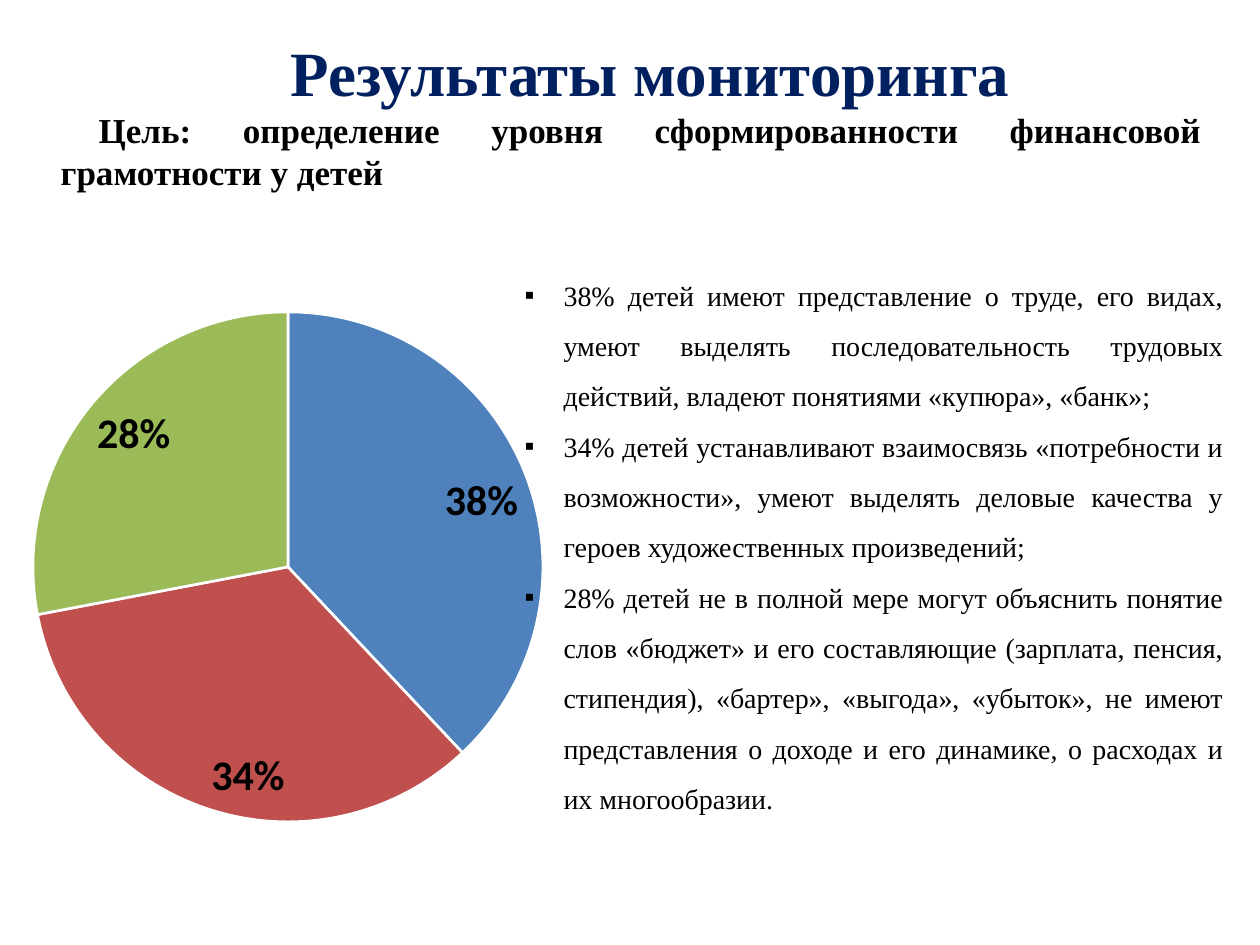
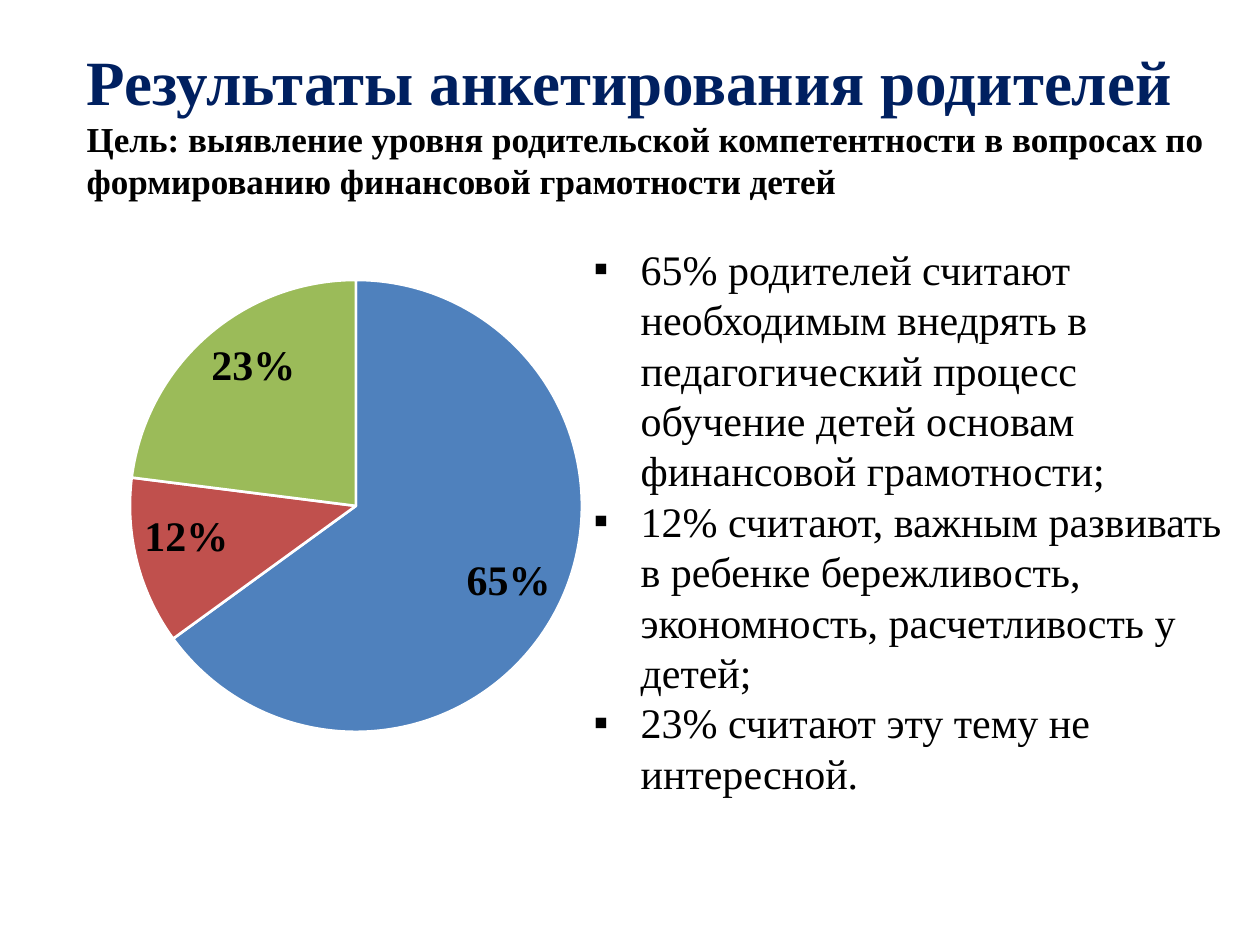
"""Build two survey slides, each with a heading, a pie chart and a list of findings."""
from lxml import etree
from pptx import Presentation, util as u
from pptx.chart.data import CategoryChartData
from pptx.dml.color import RGBColor
from pptx.enum import chart as ch, text
from pptx.oxml.ns import qn

SERIF = "Times New Roman"
COLORS = {"navy": "002060", "black": "000000", "white": "FFFFFF"}
SLICES = {"blue": "4F81BD", "red": "C0504D", "green": "9BBB59"}
ALIGN, ANCHOR = text.PP_ALIGN, text.MSO_ANCHOR

SLIDES = [
    {
        "title": "Результаты мониторинга",
        "goal": "Цель: определение уровня сформированности финансовой грамотности у детей",
        "head": {"box": (48, 26, 1166, 174), "anchor": ANCHOR.MIDDLE, "indent": 38,
                 "aligns": (ALIGN.CENTER, ALIGN.JUSTIFY)},
        "shares": (0.38, 0.34, 0.28),
        "pie": {"box": (15, 226, 546, 683), "disc": (288, 567, 255), "font": "Calibri"},
        "items": [
            "38% детей имеют представление о труде, его видах, умеют выделять последовательность "
            "трудовых действий, владеют понятиями «купюра», «банк»;",
            "34% детей устанавливают взаимосвязь «потребности и возможности», умеют выделять "
            "деловые качества у героев художественных произведений;",
            "28% детей не в полной мере могут объяснить понятие слов «бюджет» и его составляющие "
            "(зарплата, пенсия, стипендия), «бартер», «выгода», «убыток», не имеют представления "
            "о доходе и его динамике, о расходах и их многообразии.",
        ],
        "list": {"box": (512, 255, 724, 572), "size": 16, "hang": 39,
                 "lead": 1.5, "align": ALIGN.JUSTIFY},
    },
    {
        "title": "Результаты анкетирования родителей",
        "goal": "Цель: выявление уровня родительской компетентности в вопросах по "
                "формированию финансовой грамотности детей",
        "head": {"box": (74, 36, 1160, 174), "anchor": ANCHOR.TOP, "indent": 0,
                 "aligns": (ALIGN.LEFT, ALIGN.LEFT)},
        "shares": (0.65, 0.12, 0.23),
        "pie": {"box": (25, 193, 576, 627), "disc": (356, 506, 226), "font": SERIF},
        "items": [
            "65% родителей считают необходимым внедрять в педагогический процесс обучение "
            "детей основам финансовой грамотности;",
            "12% считают, важным развивать в ребенке бережливость, экономность, "
            "расчетливость у детей;",
            "23% считают эту тему не интересной.",
        ],
        "list": {"box": (581, 237, 655, 572), "size": 24, "hang": 47,
                 "lead": 1, "align": ALIGN.LEFT},
    },
]


def px(n):
    return u.Emu(round(n * 914400 / 126))


def style(font, size, color, bold=False, name=SERIF):
    font.name, font.size, font.bold = name, u.Pt(size), bold
    font.color.rgb = RGBColor.from_string(COLORS[color])


def place(shape, box, anchor):
    shape.left, shape.top, shape.width, shape.height = map(px, box)
    frame = shape.text_frame
    frame.word_wrap, frame.auto_size = True, text.MSO_AUTO_SIZE.NONE
    frame.vertical_anchor = anchor
    return frame


def write(frame, lines):
    frame.text = "\n".join(lines)
    for para in frame.paragraphs:
        para.space_before = u.Pt(0)
    return frame.paragraphs


def indent(para, left, first):
    props = para._p.get_or_add_pPr()
    props.set("marL", str(px(left)))
    props.set("indent", str(px(first)))
    return props


def add_head(slide, data):
    head = data["head"]
    frame = place(slide.shapes.title, head["box"], head["anchor"])
    paras = write(frame, (data["title"], data["goal"]))
    looks = ((36, "navy"), (20, "black"))
    for para, align, look in zip(paras, head["aligns"], looks):
        para.alignment = align
        indent(para, 0, head["indent"])
        style(para.font, *look, bold=True)


def set_plot(plot, box, disc):
    left, top, width, height = box
    mid_x, mid_y, radius = disc
    area = plot._element.getparent()
    for old in area.findall(qn("c:layout")):
        area.remove(old)
    layout = etree.Element(qn("c:layout"))
    area.insert(0, layout)
    manual = etree.SubElement(layout, qn("c:manualLayout"))
    values = {
        "layoutTarget": "inner", "xMode": "edge", "yMode": "edge",
        "x": (mid_x - radius - left) / width, "y": (mid_y - radius - top) / height,
        "w": 2 * radius / width, "h": 2 * radius / height,
    }
    for tag, value in values.items():
        etree.SubElement(manual, qn(f"c:{tag}")).set("val", str(value))


def add_pie(slide, data):
    pie = data["pie"]
    source = CategoryChartData(number_format="0%")
    source.categories = ["1", "2", "3"]
    source.add_series("Series 1", data["shares"])
    chart = slide.shapes.add_chart(
        ch.XL_CHART_TYPE.PIE, *map(px, pie["box"]), source).chart
    chart.has_legend = chart.has_title = False
    style(chart.font, 10, "black", name="Calibri")
    plot = chart.plots[0]
    plot.vary_by_categories = True
    set_plot(plot, pie["box"], pie["disc"])
    for i, color in enumerate(SLICES.values()):
        form = plot.series[0].points[i].format
        form.fill.solid()
        form.fill.fore_color.rgb = RGBColor.from_string(color)
        form.line.color.rgb = RGBColor.from_string(COLORS["white"])
        form.line.width = u.Pt(1.5)
    plot.has_data_labels = True
    labels = plot.data_labels
    labels.show_value, labels.show_percentage = True, False
    labels.number_format, labels.number_format_is_linked = "0%", False
    labels.position = ch.XL_LABEL_POSITION.INSIDE_END
    style(labels.font, 24, "black", bold=True, name=pie["font"])


def add_list(slide, data):
    look, body = data["list"], slide.placeholders[1]
    frame = place(body, look["box"], ANCHOR.TOP)
    for para in write(frame, data["items"]):
        para.alignment, para.line_spacing = look["align"], look["lead"]
        props = indent(para, look["hang"], -look["hang"])
        etree.SubElement(props, qn("a:buFont")).set("typeface", SERIF)
        etree.SubElement(props, qn("a:buChar")).set("char", "▪")
        style(para.font, look["size"], "black")
    slide.shapes._spTree.append(body._element)


def main():
    deck = Presentation()
    deck.slide_width, deck.slide_height = px(1260), px(945)
    for data in SLIDES:
        slide = deck.slides.add_slide(deck.slide_layouts[1])
        add_head(slide, data)
        add_pie(slide, data)
        add_list(slide, data)
    deck.save("out.pptx")


if __name__ == "__main__":
    main()
